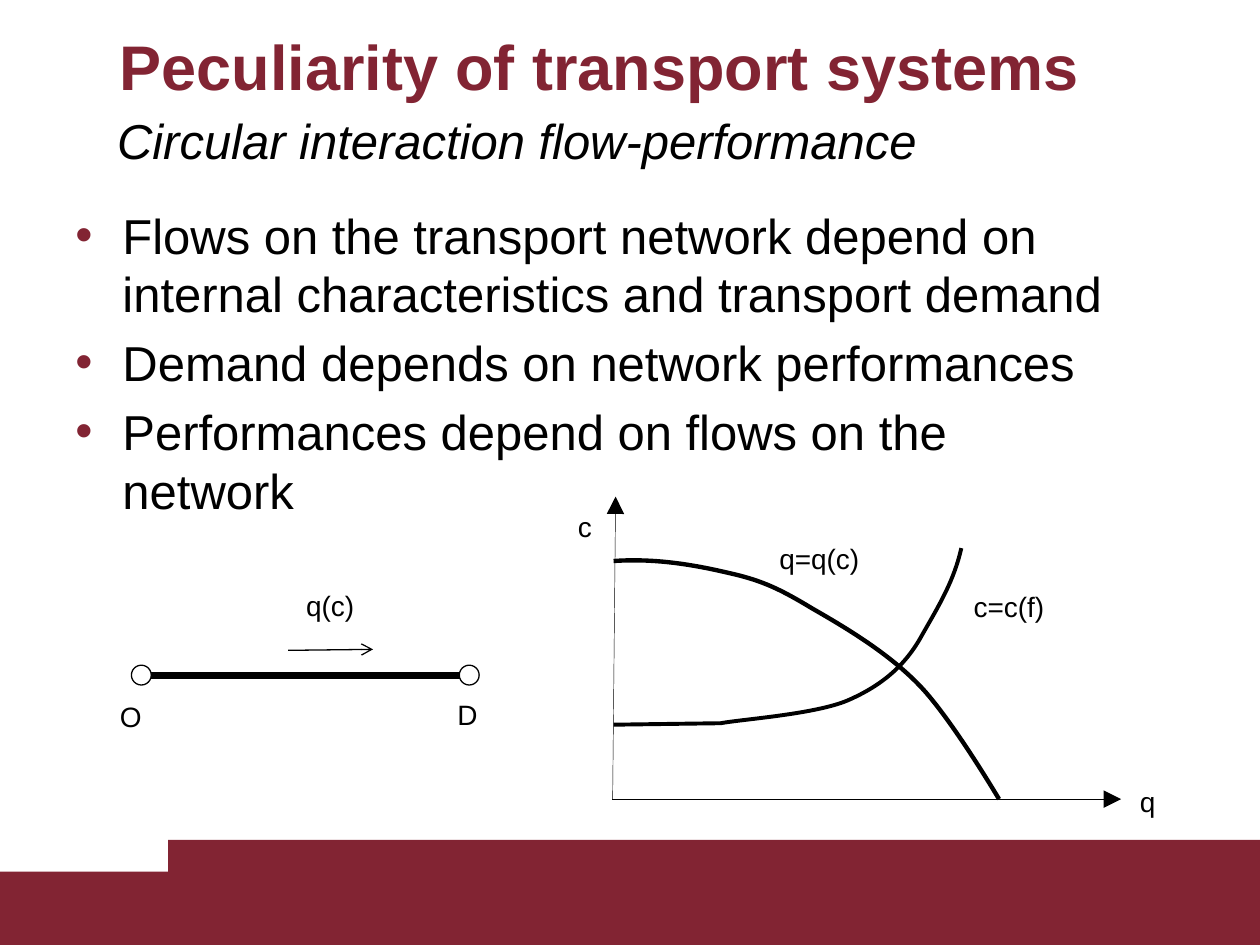
from lxml.etree import SubElement
from pptx import Presentation
from pptx.dml.color import RGBColor
from pptx.enum.shapes import MSO_CONNECTOR as Connector, MSO_SHAPE as Shape
from pptx.enum.text import MSO_ANCHOR as Anchor, MSO_AUTO_SIZE as AutoSize, PP_ALIGN as Align
from pptx.oxml.ns import qn
from pptx.util import Cm, Pt

MAROON, BLACK, WHITE = "822433", "000000", "FFFFFF"


def color(value):
    return RGBColor.from_string(value)


class SlideBuilder:
    font = "Arial"
    body_size = 28
    label_size = 16

    def __init__(self, slide):
        self.slide = slide
        self.shapes = slide.shapes

    def style(self, paragraph, size, ink=BLACK, bold=False, italic=False):
        for run in paragraph.runs:
            font = run.font
            font.name, font.size = self.font, Pt(size)
            font.bold, font.italic = bold, italic
            font.color.rgb = color(ink)

    def box(self, left, top, width, height, wrap=True):
        frame = self.shapes.add_textbox(Cm(left), Cm(top), Cm(width), Cm(height)).text_frame
        frame.word_wrap = wrap
        return frame

    def title(self, text, left, top, width, height):
        title = self.shapes.title
        title.left, title.top, title.width, title.height = map(Cm, (left, top, width, height))
        frame = title.text_frame
        frame.text = text
        frame.auto_size = AutoSize.NONE
        frame.vertical_anchor = Anchor.TOP
        heading = frame.paragraphs[0]
        heading.alignment = Align.LEFT
        self.style(heading, 36, MAROON, bold=True)

    def subtitle(self, text, *place):
        frame = self.box(*place)
        frame.text = text
        self.style(frame.paragraphs[0], self.body_size, italic=True)

    def bullets(self, items, *place):
        frame = self.box(*place)
        frame.text = "\n".join(items)
        for i, paragraph in enumerate(frame.paragraphs):
            paragraph.space_before = Pt(0.2 * self.body_size if i else 0)
            props = paragraph._p.get_or_add_pPr()
            props.set("marL", str(Cm(0.95)))
            props.set("indent", str(-Cm(0.95)))
            SubElement(SubElement(props, qn("a:buClr")), qn("a:srgbClr"), val=MAROON)
            SubElement(props, qn("a:buFont"), typeface=self.font)
            SubElement(props, qn("a:buChar"), char="•")
            self.style(paragraph, self.body_size)

    def label(self, text, left, top, width):
        frame = self.box(left, top, width, 0.94, wrap=False)
        frame.text = text
        self.style(frame.paragraphs[0], self.label_size)

    def preset(self, kind, left, top, width, height, fill, outline=None):
        shape = self.shapes.add_shape(kind, Cm(left), Cm(top), Cm(width), Cm(height))
        shape.shadow.inherit = False
        shape.fill.solid()
        shape.fill.fore_color.rgb = color(fill)
        if outline:
            shape.line.color.rgb = color(outline)
            shape.line.width = Pt(0.75)
        else:
            shape.line.fill.background()

    def line(self, start, end, weight, head=None, head_size="med"):
        line = self.shapes.add_connector(Connector.STRAIGHT, *map(Cm, start + end))
        line.line.color.rgb = color(BLACK)
        line.line.width = Pt(weight)
        if head:
            SubElement(line.line._get_or_add_ln(), qn("a:tailEnd"),
                       type=head, w=head_size, len=head_size)
        SubElement(line._element.spPr, qn("a:effectLst"))

    def curve(self, start, segments, weight):
        """A segment is (end,) when straight, (control, control, end) when curved."""
        builder = self.shapes.build_freeform(Cm(start[0]), Cm(start[1]))
        builder.add_line_segments([(Cm(x), Cm(y)) for *_, (x, y) in segments], close=False)
        curve = builder.convert_to_shape()
        for step, (*controls, _) in zip(list(curve._element.iter(qn("a:lnTo"))), segments):
            if controls:
                step.tag = qn("a:cubicBezTo")
                end = step[0]
                for x, y in controls:
                    SubElement(step, qn("a:pt"), x=str(Cm(x) - curve.left), y=str(Cm(y) - curve.top))
                step.append(end)
        curve.shadow.inherit = False
        curve.fill.background()
        curve.line.color.rgb = color(BLACK)
        curve.line.width = Pt(weight)


def main():
    deck = Presentation()
    deck.slide_width, deck.slide_height = Cm(25.4), Cm(19.05)
    page = SlideBuilder(deck.slides.add_slide(deck.slide_layouts[5]))

    # Stepped footer band
    page.preset(Shape.RECTANGLE, 0, 17.57, 25.4, 1.48, MAROON)
    page.preset(Shape.RECTANGLE, 3.39, 16.93, 22.01, 2.12, MAROON)

    # Headings and main points
    page.title("Peculiarity of transport systems", 2.16, 0.43, 21.36, 1.4)
    page.bullets([
        "Flows on the transport network depend on internal characteristics and transport demand",
        "Demand depends on network performances",
        "Performances depend on flows on the network",
    ], 1.27, 4.01, 21.7, 5.46)
    page.subtitle("Circular interaction flow-performance", 2.11, 2.11, 22.43, 1.45)

    # Link from origin to destination
    node, link_y = 0.4, 13.61
    origin_x, destination_x = 2.85, 9.46
    page.line((origin_x, link_y), (destination_x, link_y), 4)
    for x in (origin_x, destination_x):
        page.preset(Shape.OVAL, x - node / 2, link_y - node / 2, node, node, WHITE, BLACK)
    page.line((5.81, 13.11), (7.52, 13.09), 0.75, "arrow")

    # Axes of the cost and flow diagram
    axis_y = 16.11
    page.line((12.35, axis_y), (12.41, 10.01), 0.25, "triangle", "lg")
    page.line((12.34, axis_y), (22.6, axis_y), 0.5, "triangle", "lg")

    # Cost curve c(f), then demand curve q(c)
    page.curve((12.37, 14.61), [
        ((14.53, 14.58),),
        ((14.96, 14.5), (16.43, 14.4), (17.09, 14.12)),
        ((17.78, 13.82), (18.26, 13.41), (18.59, 12.8)),
        ((18.95, 12.17), (19.23, 11.71), (19.38, 11.05)),
    ], 2.25)
    page.curve((12.37, 11.31), [
        ((13.26, 11.25), (14.05, 11.4), (14.73, 11.56)),
        ((15.39, 11.71), (15.75, 11.89), (16.38, 12.27)),
        ((16.99, 12.62), (17.86, 13.13), (18.49, 13.77)),
        ((19.13, 14.4), (20.14, axis_y), (20.14, axis_y)),
    ], 2.5)

    # Diagram labels
    for text, left, top, width in [
        ("O", 2.17, 13.97, 0.97),
        ("D", 8.97, 13.94, 0.97),
        ("q(c)", 5.92, 11.73, 1.5),
        ("c", 11.4, 10.15, 0.79),
        ("q", 22.73, 15.69, 0.84),
        ("c=c(f)", 19.38, 11.76, 1.96),
        ("q=q(c)", 15.46, 10.8, 2.13),
    ]:
        page.label(text, left, top, width)

    deck.save("out.pptx")


if __name__ == "__main__":
    main()
